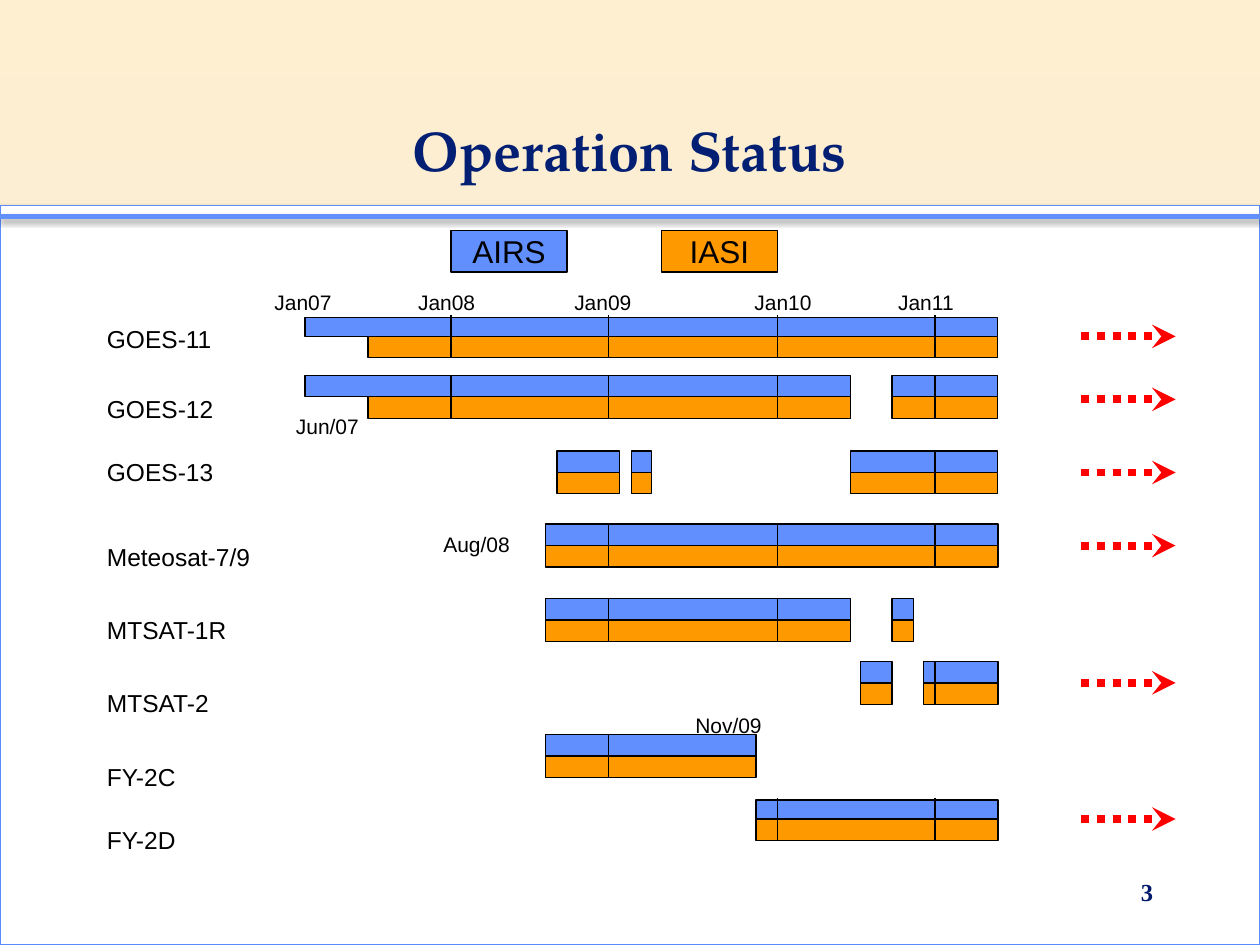
from dataclasses import dataclass
from typing import Any

from lxml.etree import SubElement
from pptx import Presentation
from pptx.dml.color import RGBColor
from pptx.enum.dml import MSO_LINE
from pptx.enum.shapes import MSO_CONNECTOR as CONN, MSO_SHAPE as SHAPE
from pptx.enum.text import MSO_ANCHOR as ANCHOR, PP_ALIGN as ALIGN
from pptx.oxml.ns import qn
from pptx.util import Inches, Pt

BLACK = RGBColor(0x00, 0x00, 0x00)
WHITE = RGBColor(0xFF, 0xFF, 0xFF)
RED = RGBColor(0xFF, 0x00, 0x00)
BLUE = RGBColor(0x61, 0x8F, 0xFD)
PANEL_BLUE = RGBColor(0x5B, 0x8A, 0xFB)
ORANGE = RGBColor(0xFF, 0x99, 0x00)
TITLE_NAVY = RGBColor(0x03, 0x1F, 0x74)
NUMBER_NAVY = RGBColor(0x01, 0x18, 0x6C)
SKY = [(0, RGBColor(0xFF, 0xEF, 0xD1)), (65, RGBColor(0xF0, 0xEB, 0xD5)),
       (100, RGBColor(0xD1, 0xC3, 0x9F))]

YEAR_LINES = [3.58, 4.83, 6.17, 7.42]
YEARS = ["Jan07", "Jan08", "Jan09", "Jan10", "Jan11"]
YEAR_TABS = [1.14, 2.38, 3.81, 4.95]
END = 7.92
BAR = 0.17
MIN_MARKED = 0.5

NOTES = [("Jun/07", 2.25, 3.23, 0.95), ("Aug/08", 3.42, 4.17, 0.73),
         ("Nov/09", 5.42, 5.61, 0.73)]


@dataclass
class Row:
    name: str
    top: float
    width: float
    mid: float
    spans: list
    iasi_start: float = 0
    airs_height: float = BAR
    arrow: float = 0


ROWS = [
    Row("GOES-11", 2.52, 1.04, 2.67, [(2.42, END)], 2.92, 0.15, 2.67),
    Row("GOES-12", 3.08, 1.28, 3.15, [(2.42, 6.75), (7.08, END)], 2.92, BAR, 3.17),
    Row("GOES-13", 3.58, 1.28, 3.75, [(4.42, 4.92), (5.01, 5.17), (6.75, END)], arrow=3.75),
    Row("Meteosat-7/9", 4.25, 1.34, 4.33, [(4.33, END)], arrow=4.33),
    Row("MTSAT-1R", 4.83, 1.16, 4.92, [(4.33, 6.75), (7.08, 7.25)]),
    Row("MTSAT-2", 5.41, 1.01, 5.42, [(6.83, 7.08), (7.33, END)], arrow=5.42),
    Row("FY-2C", 6.0, 0.75, 6.0, [(4.33, 6.0)]),
    Row("FY-2D", 6.5, 0.75, 6.5, [(6.0, END)], airs_height=0.15, arrow=6.5),
]


@dataclass
class Deck:
    s: Any
    font: str = "Arial"
    ink: RGBColor = BLACK
    line_width: float = 0.75

    def background(self, stops):
        fill = self.s.background.fill
        fill.gradient()
        fill.gradient_angle = 270
        gs_list = self.s.element.find(".//" + qn("a:gsLst"))
        for gs in list(gs_list):
            gs_list.remove(gs)
        for pos, color in stops:
            gs = SubElement(gs_list, qn("a:gs"), pos=str(pos * 1000))
            SubElement(gs, qn("a:srgbClr"), val=str(color))

    def run(self, tf, text, size, font=None, color=None, bold=False, align=ALIGN.LEFT):
        p = tf.paragraphs[0]
        p.alignment = align
        r = p.add_run()
        r.text = text
        r.font.size = Pt(size)
        r.font.name = font or self.font
        r.font.bold = bold
        r.font.color.rgb = color or self.ink
        return p

    def text(self, text, x, y, w, h, size, anchor=ANCHOR.TOP, wrap=True, **style):
        tf = self.s.shapes.add_textbox(Inches(x), Inches(y), Inches(w), Inches(h)).text_frame
        tf.word_wrap = wrap
        tf.vertical_anchor = anchor
        return self.run(tf, text, size, **style)

    def tabbed(self, words, tabs, x, y, w, h, size):
        p = self.text("\t".join(words), x, y, w, h, size)
        tab_list = SubElement(p._p.get_or_add_pPr(), qn("a:tabLst"))
        for tab in tabs:
            SubElement(tab_list, qn("a:tab"), pos=str(Inches(tab)), algn="l")

    def rect(self, x, y, w, h, fill, line=None):
        sp = self.s.shapes.add_shape(SHAPE.RECTANGLE, Inches(x), Inches(y), Inches(w), Inches(h))
        sp.shadow.inherit = False
        sp.fill.solid()
        sp.fill.fore_color.rgb = fill
        sp.line.color.rgb = line or self.ink
        sp.line.width = Pt(self.line_width)
        return sp

    def key(self, text, x, fill):
        tf = self.rect(x, 1.83, 0.92, 0.33, fill).text_frame
        tf.word_wrap = False
        tf.vertical_anchor = ANCHOR.MIDDLE
        self.run(tf, text, 18, align=ALIGN.CENTER)

    def line(self, x1, y1, x2, y2, color=None, width=None):
        c = self.s.shapes.add_connector(CONN.STRAIGHT, Inches(x1), Inches(y1),
                                        Inches(x2), Inches(y2))
        c.line.color.rgb = color or self.ink
        c.line.width = Pt(width or self.line_width)
        SubElement(c.element.spPr, qn("a:effectLst"))
        return c

    def arrow(self, x1, x2, y):
        c = self.line(x1, y, x2, y, RED, 4.5)
        c.line.dash_style = MSO_LINE.ROUND_DOT
        SubElement(c.element.spPr.find(qn("a:ln")), qn("a:tailEnd"), type="stealth")

    def shadow(self, sp, alpha, dist):
        effects = sp.element.spPr.find(qn("a:effectLst"))
        outer = SubElement(effects, qn("a:outerShdw"), blurRad=str(Pt(3.1)),
                           dist=str(Pt(dist)), dir="5400000", rotWithShape="0")
        color = SubElement(outer, qn("a:srgbClr"), val=str(BLACK))
        SubElement(color, qn("a:alpha"), val=str(alpha * 1000))

    def timeline(self, row):
        self.text(row.name, 0.75, row.top, row.width, 0.34, 14, wrap=False)
        for i, (start, end) in enumerate(row.spans):
            self.rect(start, row.mid - row.airs_height, end - start, row.airs_height, BLUE)
            low = row.iasi_start if i == 0 and row.iasi_start else start
            self.rect(low, row.mid, end - low, BAR, ORANGE)
            if round(end - start, 2) > MIN_MARKED:
                for x in YEAR_LINES:
                    if start < x < end:
                        self.line(x, row.mid - BAR, x, row.mid + BAR)
        if row.arrow:
            self.arrow(8.58, 9.33, row.arrow)


def main():
    prs = Presentation()
    prs.slide_width, prs.slide_height = Inches(10), Inches(7.5)
    deck = Deck(prs.slides.add_slide(prs.slide_layouts[6]))
    deck.background(SKY)
    deck.shadow(deck.rect(0, 1.63, 10, 5.87, WHITE, PANEL_BLUE), 35, 1.8)
    deck.shadow(deck.line(0, 1.72, 10, 1.72, BLUE, 2.8), 38, 1.6)
    title = deck.text("Operation Status", 2, 0.25, 6, 1.25, 32, ANCHOR.BOTTOM,
                      font="TeX Gyre Pagella", color=TITLE_NAVY, bold=True, align=ALIGN.CENTER)
    title.line_spacing = 0.85
    deck.key("AIRS", 3.58, BLUE)
    deck.key("IASI", 5.25, ORANGE)
    deck.tabbed(YEARS, YEAR_TABS, 2.08, 2.25, 5.67, 0.3, 12)
    for note, x, y, w in NOTES:
        deck.text(note, x, y, w, 0.3, 12, wrap=False)
    for row in ROWS:
        deck.timeline(row)
    deck.text("3", 7.17, 6.83, 2.08, 0.5, 14, ANCHOR.MIDDLE, font="Times New Roman",
              color=NUMBER_NAVY, bold=True, align=ALIGN.RIGHT)
    prs.save("out.pptx")


if __name__ == "__main__":
    main()
